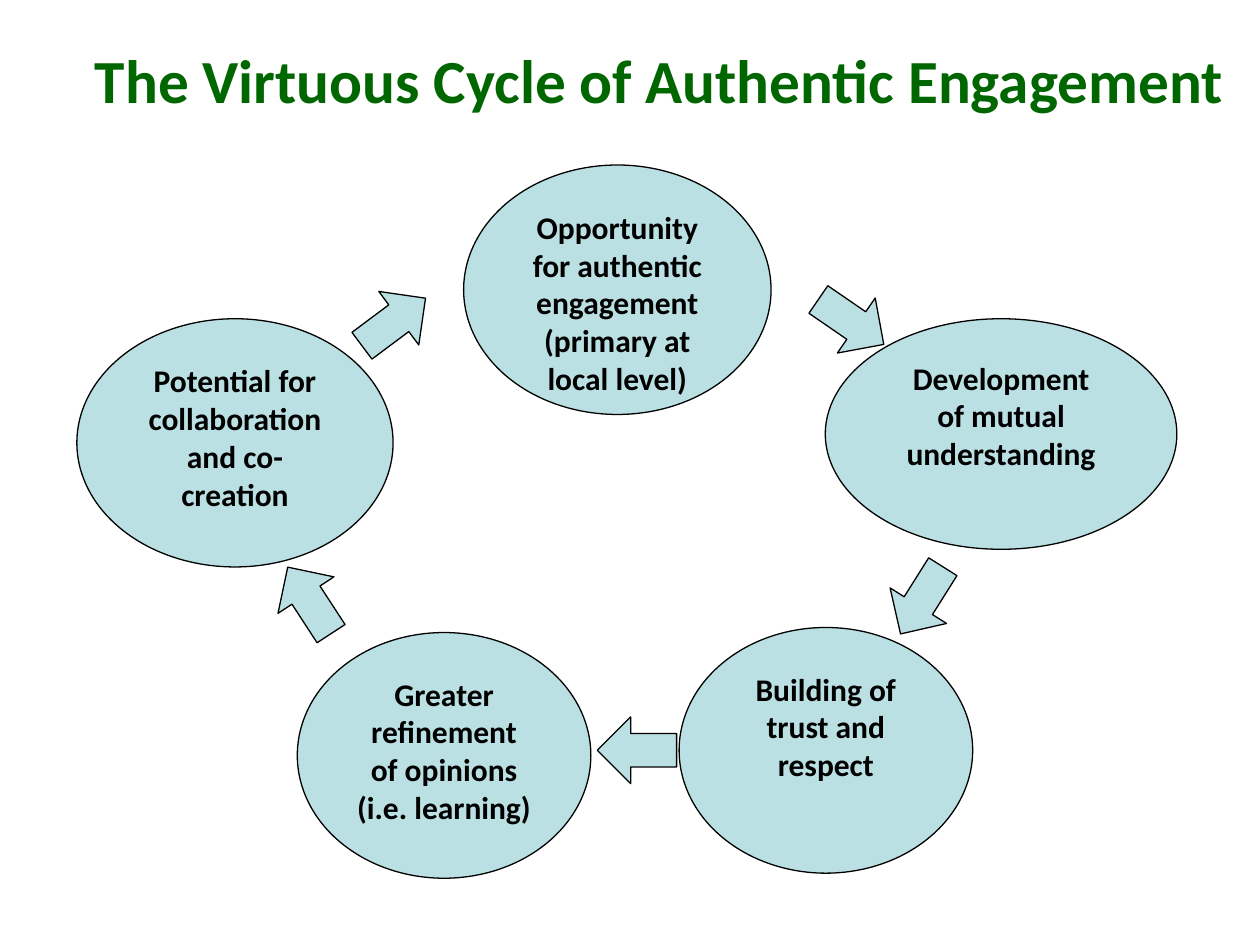
from pptx import Presentation
from pptx.dml.color import RGBColor
from pptx.enum.shapes import MSO_SHAPE
from pptx.enum.text import MSO_ANCHOR, PP_ALIGN
from pptx.util import Inches, Pt

ELLIPSE = MSO_SHAPE.OVAL
ARROW = MSO_SHAPE.DOWN_ARROW
CENTER = PP_ALIGN.CENTER
TOP = MSO_ANCHOR.TOP
MIDDLE = MSO_ANCHOR.MIDDLE
GREEN = RGBColor(0x00, 0x66, 0x00)
PALE_BLUE = RGBColor(0xBB, 0xE0, 0xE3)
BLACK = RGBColor(0x00, 0x00, 0x00)

deck = Presentation()
deck.slide_width = Inches(10)
deck.slide_height = Inches(7.5)
page = deck.slides.add_slide(deck.slide_layouts[6])


def add_outlined(kind, left, top, width, height):
    shape = page.shapes.add_shape(
        kind, Inches(left), Inches(top), Inches(width), Inches(height))
    shape.shadow.inherit = False
    shape.fill.solid()
    shape.fill.fore_color.rgb = PALE_BLUE
    shape.line.color.rgb = BLACK
    shape.line.width = Pt(0.75)
    return shape


def write_text(box, lines, size, color, anchor):
    frame = box.text_frame
    frame.word_wrap = True
    frame.vertical_anchor = anchor
    frame.text = "\n".join(lines)
    for para in frame.paragraphs:
        para.alignment = CENTER
        para.font.name = "Calibri"
        para.font.size = Pt(size)
        para.font.bold = True
        para.font.color.rgb = color


title = page.shapes.add_textbox(Inches(-0.27), 0, Inches(11.01), Inches(1.25))
write_text(title, ["The Virtuous Cycle of Authentic Engagement"], 35, GREEN, MIDDLE)

stages = [
    (3.68, 1.31, 2.44, 1.98,
     ["Opportunity for authentic", "engagement", "(primary at local level)"]),
    (6.55, 2.53, 2.79, 1.83, ["Development", "of mutual", "understanding"]),
    (5.39, 4.98, 2.33, 1.95, ["Building of trust and respect"]),
    (2.36, 5.02, 2.33, 1.95,
     ["Greater refinement", "of opinions", "(i.e. learning)"]),
    (0.61, 2.53, 2.51, 1.97, ["Potential for collaboration and co-creation"]),
]
for left, top, width, height, lines in stages:
    stage = add_outlined(ELLIPSE, left, top, width, height)
    write_text(stage, lines, 18, BLACK, TOP)

ARROW_WIDTH, ARROW_HEIGHT = 0.53, 0.63
UPPER, MIDWAY, LOWER = 2.24, 4.45, 5.64
arrows = [
    (6.49, UPPER, 304.5),
    (7.05, MIDWAY, 32.2),
    (4.79, LOWER, 90),
    (2.19, MIDWAY, 146.9),
    (2.86, UPPER, 233.2),
]
for left, top, angle in arrows:
    arrow = add_outlined(ARROW, left, top, ARROW_WIDTH, ARROW_HEIGHT)
    arrow.rotation = angle

deck.save("out.pptx")
